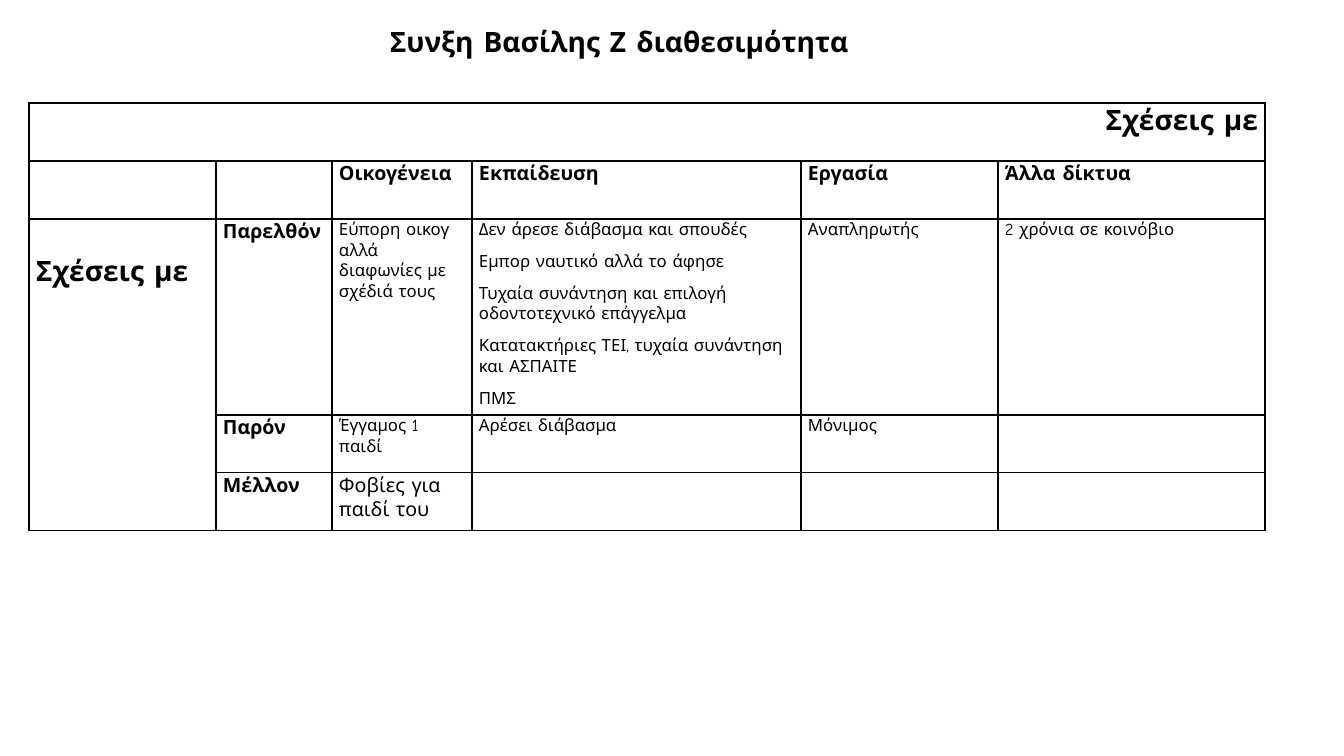
import pptx
import pptx.util
import pptx.dml.color
import pptx.enum.text
from dataclasses import dataclass
from lxml import etree

TITLE = "Συνξη Βασίλης Ζ διαθεσιμότητα"
RELATIONS = "Σχέσεις με"
COLUMN_HEADS = ["Οικογένεια", "Εκπαίδευση", "Εργασία", "Άλλα δίκτυα"]
PERIODS = [
    ("Παρελθόν", [
        ["Εύπορη οικογ αλλά διαφωνίες με σχέδιά τους"],
        ["Δεν άρεσε διάβασμα και σπουδές",
         "Εμπορ ναυτικό αλλά το άφησε",
         "Τυχαία συνάντηση και επιλογή οδοντοτεχνικό επάγγελμα",
         "Κατατακτήριες ΤΕΙ, τυχαία συνάντηση και ΑΣΠΑΙΤΕ",
         "ΠΜΣ"],
        ["Αναπληρωτής"],
        ["2 χρόνια σε κοινόβιο"]]),
    ("Παρόν", [["Έγγαμος 1 παιδί"], ["Αρέσει διάβασμα"], ["Μόνιμος"], []]),
    ("Μέλλον", [["Φοβίες για παιδί του"], [], [], []]),
]

TITLE_BOX = (380, 20, 581, 44)
TABLE_AT = (29, 103)
COLUMNS = [187, 116, 140, 329, 197, 267]
ROWS = [58, 58, 196, 58, 58]
CELL_MARGIN = 7
SIDE_LABEL_DROP = 35


@dataclass(frozen=True)
class Theme:
    font: str = "Comic Neue"
    ink: str = "000000"
    background: str = "FFFFFF"
    title: int = 20
    heading: int = 14
    body: int = 12
    border: int = 1


THEME = Theme()
RIGHT = pptx.enum.text.PP_ALIGN.RIGHT
DRAWING_NS = "http://schemas.openxmlformats.org/drawingml/2006/main"


def px(n):
    return pptx.util.Emu(round(n * 914400 / 100.8))


def rgb(value):
    return pptx.dml.color.RGBColor.from_string(value)


def write(tf, lines, size=THEME.body, bold=False, align=None, spacing=None, after=None):
    tf.word_wrap = True
    for i, line in enumerate(lines):
        p = tf.paragraphs[0] if i == 0 else tf.add_paragraph()
        p.alignment = align
        p.line_spacing = spacing
        if after is not None:
            p.space_after = pptx.util.Pt(after)
        r = p.add_run()
        r.text = line
        r.font.name = THEME.font
        r.font.size = pptx.util.Pt(size)
        r.font.bold = bold
        r.font.color.rgb = rgb(THEME.ink)


def frame_cell(cell):
    """Clear the fill, set the margins and draw a line on all four sides."""
    cell.fill.background()
    cell.margin_left = cell.margin_right = px(CELL_MARGIN)
    cell.margin_top = cell.margin_bottom = 0
    tcPr = cell._tc.get_or_add_tcPr()
    for i, side in enumerate("LRTB"):
        ln = etree.Element(f"{{{DRAWING_NS}}}ln{side}",
                           w=str(pptx.util.Pt(THEME.border)))
        fill = etree.SubElement(ln, f"{{{DRAWING_NS}}}solidFill")
        etree.SubElement(fill, f"{{{DRAWING_NS}}}srgbClr", val=THEME.ink)
        tcPr.insert(i, ln)


def write_cell(cell, lines, **fmt):
    write(cell.text_frame, lines, spacing=1.07, after=8, **fmt)


def add_relations_table(slide):
    x, y = TABLE_AT
    table = slide.shapes.add_table(len(ROWS), len(COLUMNS), px(x), px(y),
                                   px(sum(COLUMNS)), px(sum(ROWS))).table
    table.first_row = table.horz_banding = False
    for column, width in zip(table.columns, COLUMNS):
        column.width = px(width)
    for row, height in zip(table.rows, ROWS):
        row.height = px(height)
    for cell in table.iter_cells():
        frame_cell(cell)

    top, side = table.cell(0, 0), table.cell(2, 0)
    top.merge(table.cell(0, len(COLUMNS) - 1))
    side.merge(table.cell(len(ROWS) - 1, 0))
    side.margin_top = px(SIDE_LABEL_DROP)
    write_cell(top, [RELATIONS], size=THEME.title, bold=True, align=RIGHT)
    write_cell(side, [RELATIONS], size=THEME.title, bold=True)

    for c, head in enumerate(COLUMN_HEADS, 2):
        write_cell(table.cell(1, c), [head], size=THEME.heading, bold=True)
    for r, (period, entries) in enumerate(PERIODS, 2):
        write_cell(table.cell(r, 1), [period], size=THEME.heading, bold=True)
        size = THEME.heading if period == "Μέλλον" else THEME.body
        for c, lines in enumerate(entries, 2):
            write_cell(table.cell(r, c), lines, size=size)


def main():
    prs = pptx.Presentation()
    prs.slide_width, prs.slide_height = px(1344), px(756)
    slide = prs.slides.add_slide(prs.slide_layouts[6])
    slide.background.fill.solid()
    slide.background.fill.fore_color.rgb = rgb(THEME.background)
    add_relations_table(slide)
    title = slide.shapes.add_textbox(*map(px, TITLE_BOX))
    write(title.text_frame, [TITLE], size=THEME.title, bold=True)
    prs.save("out.pptx")


if __name__ == "__main__":
    main()
